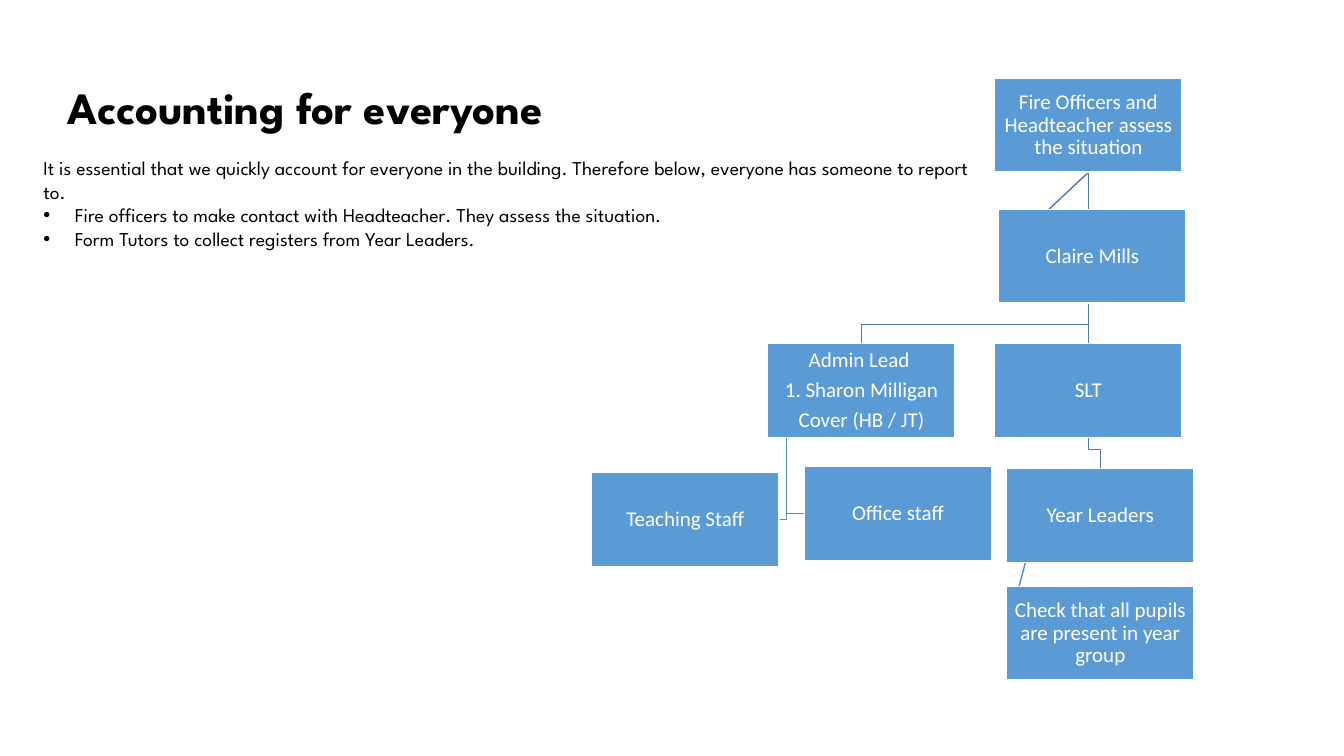
from lxml import etree
from pptx import Presentation
from pptx import util as u
from pptx.dml.color import RGBColor
from pptx.enum import shapes, text
from pptx.oxml.ns import qn


def paint(target, color):
    target.solid()
    target.fore_color.rgb = RGBColor.from_string(color)


def style(font, name, size, color):
    font.name = name
    font.size = u.Pt(size)
    paint(font.fill, color)


prs = Presentation()
prs.slide_width, prs.slide_height = u.Cm(33.87), u.Cm(19.05)
slide = prs.slides.add_slide(prs.slide_layouts[1])
tree = slide.shapes

heading = tree.title
heading.left, heading.top, heading.width, heading.height = u.Cm(1.7), u.Cm(1.96), u.Cm(31.09), u.Cm(1.4)
frame = heading.text_frame
frame.margin_left = frame.margin_right = frame.margin_bottom = 0
frame.margin_top = u.Cm(0.03)
frame.vertical_anchor = text.MSO_ANCHOR.MIDDLE
frame.auto_size = text.MSO_AUTO_SIZE.SHAPE_TO_FIT_TEXT
paragraph = frame.paragraphs[0]
paragraph.alignment = text.PP_ALIGN.LEFT
run = paragraph.add_run()
run.text = "Accounting for everyone"
run.font.bold = True
style(run.font, "League Spartan", 32, "000000")
run._r.get_or_add_rPr().set("spc", "-10")

guidance = slide.placeholders[1]
guidance.left, guidance.top, guidance.width, guidance.height = u.Cm(0.84), u.Cm(3.81), u.Cm(23.93), u.Cm(2.64)
frame = guidance.text_frame
frame.word_wrap = True
frame.vertical_anchor = text.MSO_ANCHOR.TOP
frame.auto_size = text.MSO_AUTO_SIZE.SHAPE_TO_FIT_TEXT
instructions = [
    ("It is essential that we quickly account for everyone in the building. "
     "Therefore below, everyone has someone to report to.", False),
    ("Fire officers to make contact with Headteacher. They assess the situation.", True),
    ("Form Tutors to collect registers from Year Leaders.", True),
]
for i, (instruction, bulleted) in enumerate(instructions):
    paragraph = frame.add_paragraph() if i else frame.paragraphs[0]
    props = paragraph._p.get_or_add_pPr()
    indent = u.Cm(0.79) if bulleted else 0
    props.set("marL", str(indent))
    props.set("indent", str(-indent))
    if bulleted:
        etree.SubElement(props, qn("a:buFont")).set("typeface", "Arial")
        etree.SubElement(props, qn("a:buChar")).set("char", "•")
    else:
        etree.SubElement(props, qn("a:buNone"))
    paragraph.space_before = u.Pt(0)
    run = paragraph.add_run()
    run.text = instruction
    style(run.font, "League Spartan", 14, "000000")

ROLE_W, ROLE_H = 4.72, 2.36
roles = {
    "assess": (25.07, 1.98, ["Fire Officers and Headteacher assess the situation"]),
    "admin": (19.35, 8.66, ["Admin Lead ", "1. Sharon Milligan", "Cover (HB / JT)"]),
    "teaching": (14.91, 11.91, ["Teaching Staff"]),
    "office": (20.27, 11.76, ["Office staff"]),
    "slt": (25.07, 8.66, ["SLT"]),
    "leaders": (25.37, 11.81, ["Year Leaders"]),
    "pupils": (25.37, 14.78, ["Check that all pupils are present in year group"]),
    "claire": (25.17, 5.28, ["Claire Mills"]),
}
boxes = {}
for role, (left, top, lines) in roles.items():
    box = tree.add_shape(shapes.MSO_SHAPE.RECTANGLE, u.Cm(left), u.Cm(top), u.Cm(ROLE_W), u.Cm(ROLE_H))
    box.shadow.inherit = False
    paint(box.fill, "5B9BD5")
    paint(box.line.fill, "FFFFFF")
    box.line.width = u.Pt(1)
    frame = box.text_frame
    frame.word_wrap = True
    frame.vertical_anchor = text.MSO_ANCHOR.MIDDLE
    frame.margin_left = frame.margin_right = frame.margin_top = frame.margin_bottom = u.Cm(0.03)
    for i, line in enumerate(lines):
        paragraph = frame.add_paragraph() if i else frame.paragraphs[0]
        paragraph.alignment = text.PP_ALIGN.CENTER
        paragraph.line_spacing = 0.9
        paragraph.space_after = u.Pt(5.25)
        run = paragraph.add_run()
        run.text = line
        style(run.font, "Calibri", 15, "FFFFFF")
    boxes[role] = box

UPPER, LOWER = "497CAB", "538DC1"
links = []
for source, target, side, color in [
    ("assess", "claire", 1, UPPER),
    ("assess", "slt", 0, UPPER),
    ("leaders", "pupils", 1, LOWER),
]:
    link = tree.add_connector(shapes.MSO_CONNECTOR.STRAIGHT, 0, 0, 0, 0)
    if source == "leaders":
        left, top, _ = roles[source]
        link.begin_x, link.begin_y = u.Cm(left + ROLE_W / 10), u.Cm(top + ROLE_H)
    else:
        link.begin_connect(boxes[source], 2)
    link.end_connect(boxes[target], side)
    etree.SubElement(link._element.spPr, qn("a:effectLst"))
    links.append((link, color))

trunk_x, trunk_y = 25.07 + ROLE_W / 2, 1.98 + ROLE_H
admin_x, admin_y = 19.35 + ROLE_W / 10, 8.66 + ROLE_H
routes = []
for role, gap in [("leaders", 0.48), ("admin", 0.48)]:
    left, top, _ = roles[role]
    middle = left + ROLE_W / 2
    routes.append(([(trunk_x, trunk_y), (trunk_x, top - gap), (middle, top - gap), (middle, top)], UPPER))
for role, edge in [("office", 0), ("teaching", ROLE_W)]:
    left, top, _ = roles[role]
    middle = top + ROLE_H / 2
    routes.append(([(admin_x, admin_y), (admin_x, middle), (left + edge, middle)], LOWER))
for route, color in routes:
    points = [(u.Cm(x), u.Cm(y)) for x, y in route]
    builder = tree.build_freeform(*points[0], scale=1.0)
    builder.add_line_segments(points[1:], close=False)
    link = builder.convert_to_shape()
    link.fill.background()
    link.shadow.inherit = False
    links.append((link, color))

for link, color in links:
    paint(link.line.fill, color)
    link.line.width = u.Pt(1)
    tree._spTree.insert(2, link._element)

prs.save("out.pptx")
